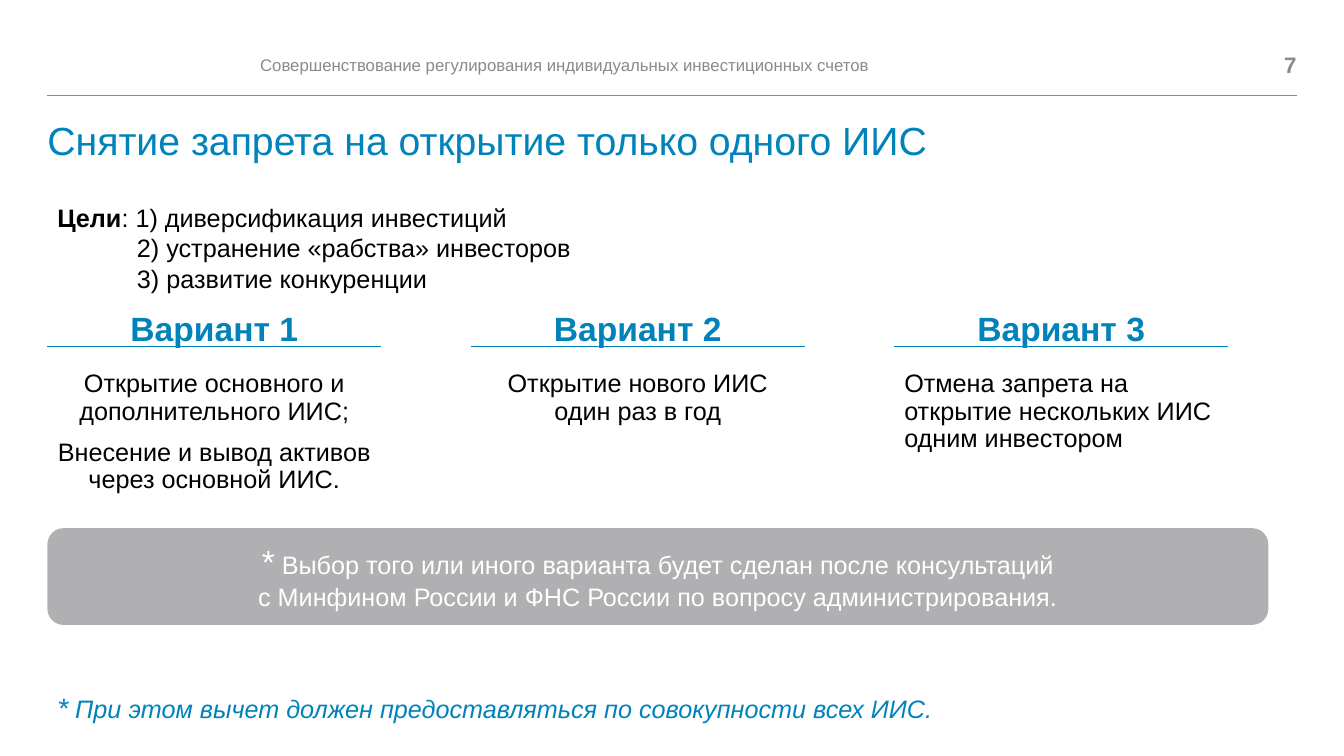
from pptx import Presentation
from pptx import util as u
from pptx.dml.color import RGBColor
from pptx.enum import shapes, text
from pptx.oxml.ns import qn
from lxml import etree

BLUE, GREY, PANEL, BLACK, WHITE = "0082BB", "888A8D", "B0B0B3", "000000", "FFFFFF"
LEFT, RIGHT = 0.47, 12.86
COLUMN_WIDTH, COLUMN_STEP = 3.31, 4.2
CENTER = text.PP_ALIGN.CENTER
MIDDLE = text.MSO_ANCHOR.MIDDLE

deck = Presentation()
deck.slide_width, deck.slide_height = u.Inches(13.33), u.Inches(7.5)
slide = deck.slides.add_slide(deck.slide_layouts[5])


def write(box, paragraphs, margin=None, anchor=text.MSO_ANCHOR.TOP):
    """Fill a shape with (paragraph format, [(words, size, colour, font format)])."""
    frame = box.text_frame
    frame.word_wrap, frame.vertical_anchor = True, anchor
    frame.auto_size = text.MSO_AUTO_SIZE.NONE
    if margin is not None:
        for side in ("left", "top", "right", "bottom"):
            setattr(frame, f"margin_{side}", u.Inches(margin))
    for number, (layout, spans) in enumerate(paragraphs):
        para = frame.add_paragraph() if number else frame.paragraphs[0]
        if "indent" in layout:
            para._p.get_or_add_pPr().set("marL", str(u.Inches(layout["indent"])))
        for name, value in layout.items():
            if name != "indent":
                setattr(para, name, value)
        for words, size, color, style in spans:
            span = para.add_run()
            span.text = words
            span.font.color.rgb = RGBColor.from_string(color)
            for name, value in {"name": "Arial", "size": u.Pt(size), **style}.items():
                setattr(span.font, name, value)


def rule(left, right, top, color):
    line = slide.shapes.add_connector(
        shapes.MSO_CONNECTOR.STRAIGHT, *map(u.Inches, (left, top, right, top)))
    line.line.color.rgb = RGBColor.from_string(color)
    line.line.width = u.Pt(0.5)
    etree.SubElement(line._element.spPr, qn("a:effectLst"))


# Header: running title, page number and rule
rule(LEFT, RIGHT, 0.95, GREY)
header = slide.shapes.add_textbox(*map(u.Inches, (2.58, 0.47, 9.23, 0.35)))
write(header, [({}, [("Совершенствование регулирования индивидуальных инвестиционных счетов",
                      12, GREY, {})])], margin=0, anchor=MIDDLE)
page = slide.shapes.add_textbox(*map(u.Inches, (12.05, 0.47, 0.81, 0.35)))
write(page, [({"alignment": text.PP_ALIGN.RIGHT}, [("7", 16, GREY, {"bold": True})])],
      margin=0, anchor=MIDDLE)

# Slide title
title = slide.shapes.title
title.left, title.top, title.width, title.height = map(
    u.Inches, (LEFT, 1.21, RIGHT - LEFT, 0.66))
write(title, [({"alignment": text.PP_ALIGN.LEFT, "line_spacing": 0.9},
               [("Снятие запрета на открытие только одного ИИС", 28, BLUE, {})])], margin=0)

# Goals
goals = slide.shapes.add_textbox(*map(u.Inches, (LEFT, 1.96, 5.86, 1.01)))
write(goals, [
    ({}, [("Цели", 18, BLACK, {"bold": True}),
          (": 1) диверсификация инвестиций", 18, BLACK, {})]),
    ({"indent": 0.79}, [("2) устранение «рабства» инвесторов", 18, BLACK, {})]),
    ({"indent": 0.79}, [("3) развитие конкуренции", 18, BLACK, {})]),
])

# Three options, each with an underlined heading
options = [
    (CENTER, ["Открытие основного и дополнительного ИИС;",
              "Внесение и вывод активов через основной ИИС."]),
    (CENTER, ["Открытие нового ИИС один раз в год"]),
    (text.PP_ALIGN.LEFT, ["Отмена запрета на открытие нескольких ИИС одним инвестором"]),
]
for column, (alignment, lines) in enumerate(options):
    left = LEFT + column * COLUMN_STEP
    option = slide.shapes.add_textbox(*map(u.Inches, (left, 3.05, COLUMN_WIDTH, 2.39)))
    heading = ({"alignment": CENTER, "line_spacing": 0.9, "space_after": u.Pt(6)},
               [(f"Вариант {column + 1}", 24, BLUE, {"bold": True})])
    body = {"alignment": alignment, "line_spacing": 0.9, "space_before": u.Pt(10)}
    write(option, [heading] + [(body, [(line, 18, BLACK, {})]) for line in lines])
    rule(left, left + COLUMN_WIDTH, 3.44, BLUE)

# Footnote
note = slide.shapes.add_textbox(*map(u.Inches, (LEFT, 6.8, 9.42, 0.44)))
write(note, [({}, [
    ("*", 20, BLUE, {"italic": True}),
    (" При этом вычет должен предоставляться по совокупности всех ИИС.",
     18, BLUE, {"italic": True})])])

# Grey panel
panel = slide.shapes.add_shape(shapes.MSO_SHAPE.ROUNDED_RECTANGLE,
                               *map(u.Inches, (LEFT, 5.24, 12.11, 0.96)))
panel.shadow.inherit = False
panel.fill.solid()
panel.fill.fore_color.rgb = RGBColor.from_string(PANEL)
panel.line.fill.background()
write(panel, [
    ({"alignment": CENTER}, [
        ("*", 24, WHITE, {}),
        (" Выбор того или иного варианта будет сделан после консультаций", 18, WHITE, {})]),
    ({"alignment": CENTER}, [
        ("c Минфином России и ФНС России по вопросу администрирования.", 18, WHITE, {})]),
], anchor=MIDDLE)

deck.save("out.pptx")
